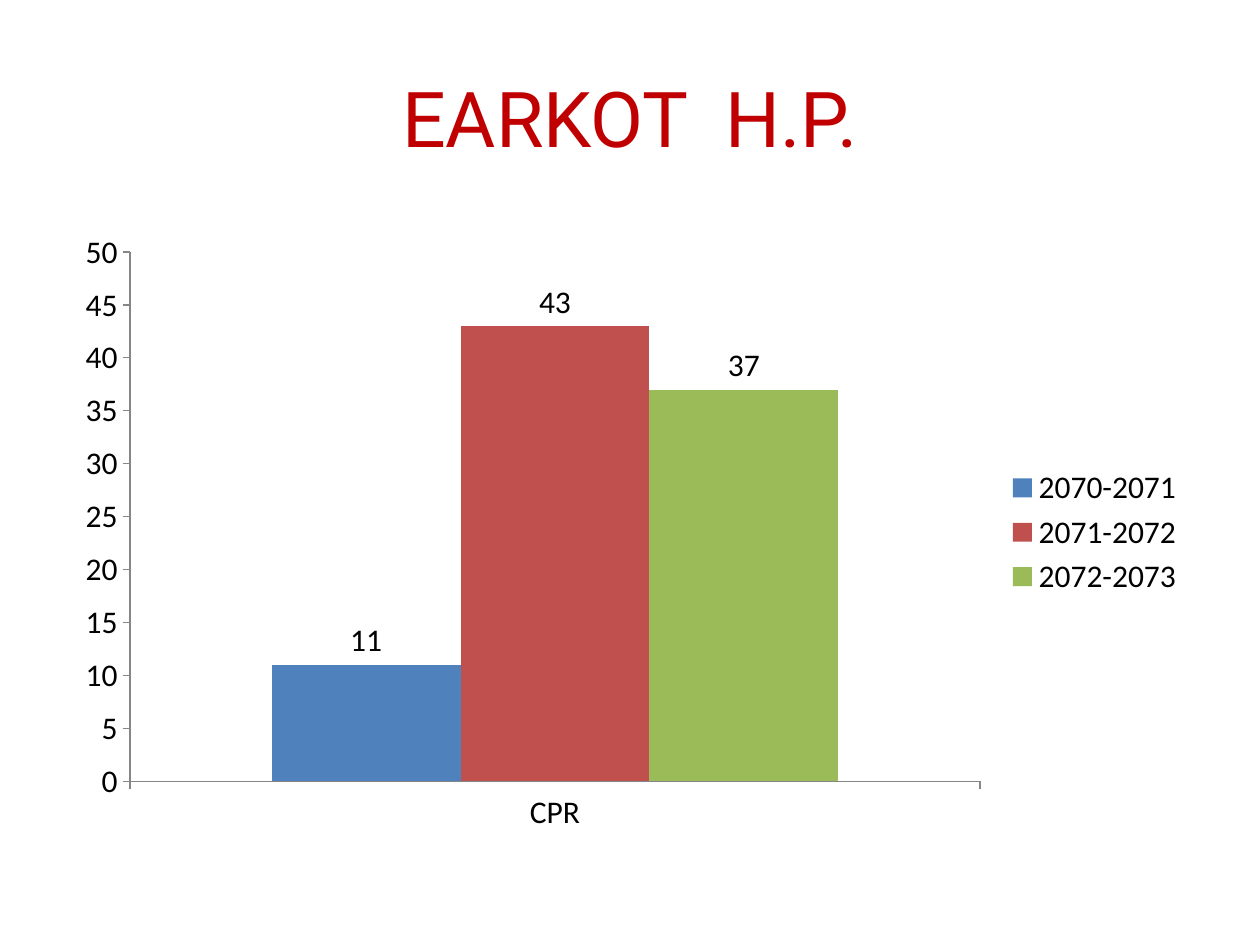
from pptx import Presentation
from pptx.chart.data import CategoryChartData
from pptx.dml.color import RGBColor
from pptx.enum.chart import XL_CHART_TYPE as ChartType
from pptx.enum.chart import XL_LABEL_POSITION as LabelPosition
from pptx.enum.chart import XL_LEGEND_POSITION as LegendPosition
from pptx.enum.chart import XL_TICK_MARK as TickMark
from pptx.enum.text import MSO_ANCHOR as Anchor
from pptx.enum.text import PP_ALIGN as Align
from pptx.util import Pt

COLORS = {
    "title": "C00000",
    "text": "000000",
    "axis": "868686",
    "2070-2071": "4F81BD",
    "2071-2072": "C0504D",
    "2072-2073": "9BBB59",
}


class SlideBuilder:
    """Holds the style and the current slide."""

    title_font, title_size = "Roboto", Pt(44)
    chart_font, chart_size = "Calibri", Pt(18)

    def __init__(self, page):
        self.page = page

    def color(self, name):
        return RGBColor.from_string(COLORS[name])

    def title(self, text, left, top, width, height):
        box = self.page.shapes.add_textbox(Pt(left), Pt(top), Pt(width), Pt(height))
        frame = box.text_frame
        frame.word_wrap = True
        frame.vertical_anchor = Anchor.MIDDLE
        para = frame.paragraphs[0]
        para.alignment = Align.CENTER
        span = para.add_run()
        span.text = text
        span.font.name = self.title_font
        span.font.size = self.title_size
        span.font.color.rgb = self.color("title")

    def column_chart(self, categories, values, left, top, width, height):
        data = CategoryChartData()
        data.categories = categories
        for name, numbers in values.items():
            data.add_series(name, numbers)
        chart = self.page.shapes.add_chart(
            ChartType.COLUMN_CLUSTERED, Pt(left), Pt(top), Pt(width), Pt(height), data
        ).chart
        chart.has_title = False
        chart.font.name = self.chart_font
        chart.font.size = self.chart_size
        chart.font.color.rgb = self.color("text")

        # Legend
        chart.has_legend = True
        chart.legend.position = LegendPosition.RIGHT
        chart.legend.include_in_layout = False

        # Axes
        for axis in (chart.category_axis, chart.value_axis):
            axis.has_major_gridlines = False
            axis.major_tick_mark = TickMark.OUTSIDE
            axis.minor_tick_mark = TickMark.NONE
            axis.format.line.color.rgb = self.color("axis")
        chart.value_axis.minimum_scale = 0
        chart.value_axis.maximum_scale = 50
        chart.value_axis.major_unit = 5

        # Columns and their value labels
        plot = chart.plots[0]
        plot.gap_width = 150
        plot.overlap = 0
        plot.vary_by_categories = False
        for series in plot.series:
            series.format.fill.solid()
            series.format.fill.fore_color.rgb = self.color(series.name)
            series.invert_if_negative = False
            series.data_labels.show_value = True
            series.data_labels.position = LabelPosition.OUTSIDE_END


def main():
    deck = Presentation()
    deck.slide_width, deck.slide_height = Pt(720), Pt(540)
    builder = SlideBuilder(deck.slides.add_slide(deck.slide_layouts[6]))

    # Heading
    builder.title("EARKOT  H.P.", 36, 21.6, 648, 90)

    # Rate by year
    rates = {"2070-2071": [11], "2071-2072": [43], "2072-2073": [37]}
    builder.column_chart(["CPR"], rates, 36, 126, 648, 356.4)

    deck.save("out.pptx")


if __name__ == "__main__":
    main()
